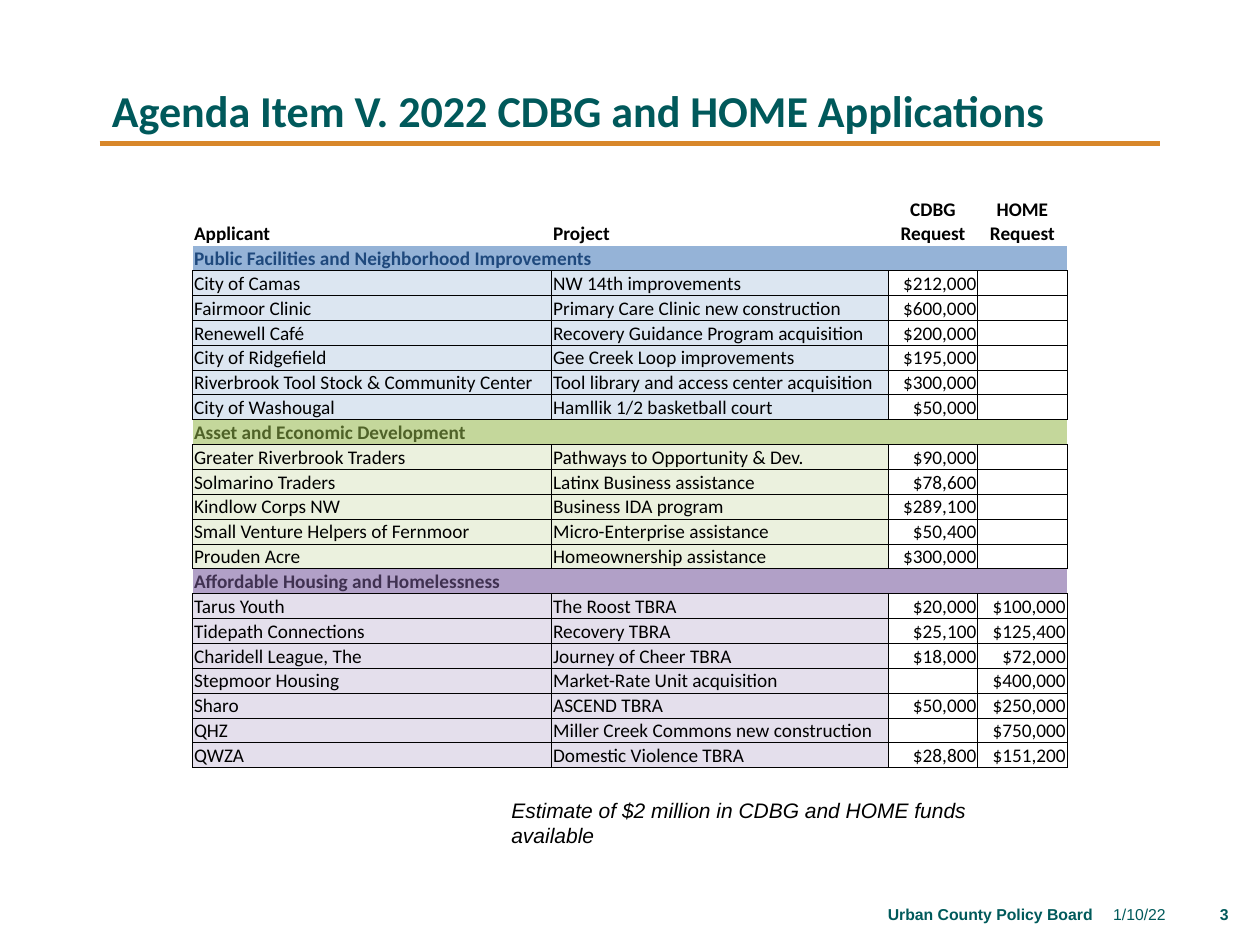
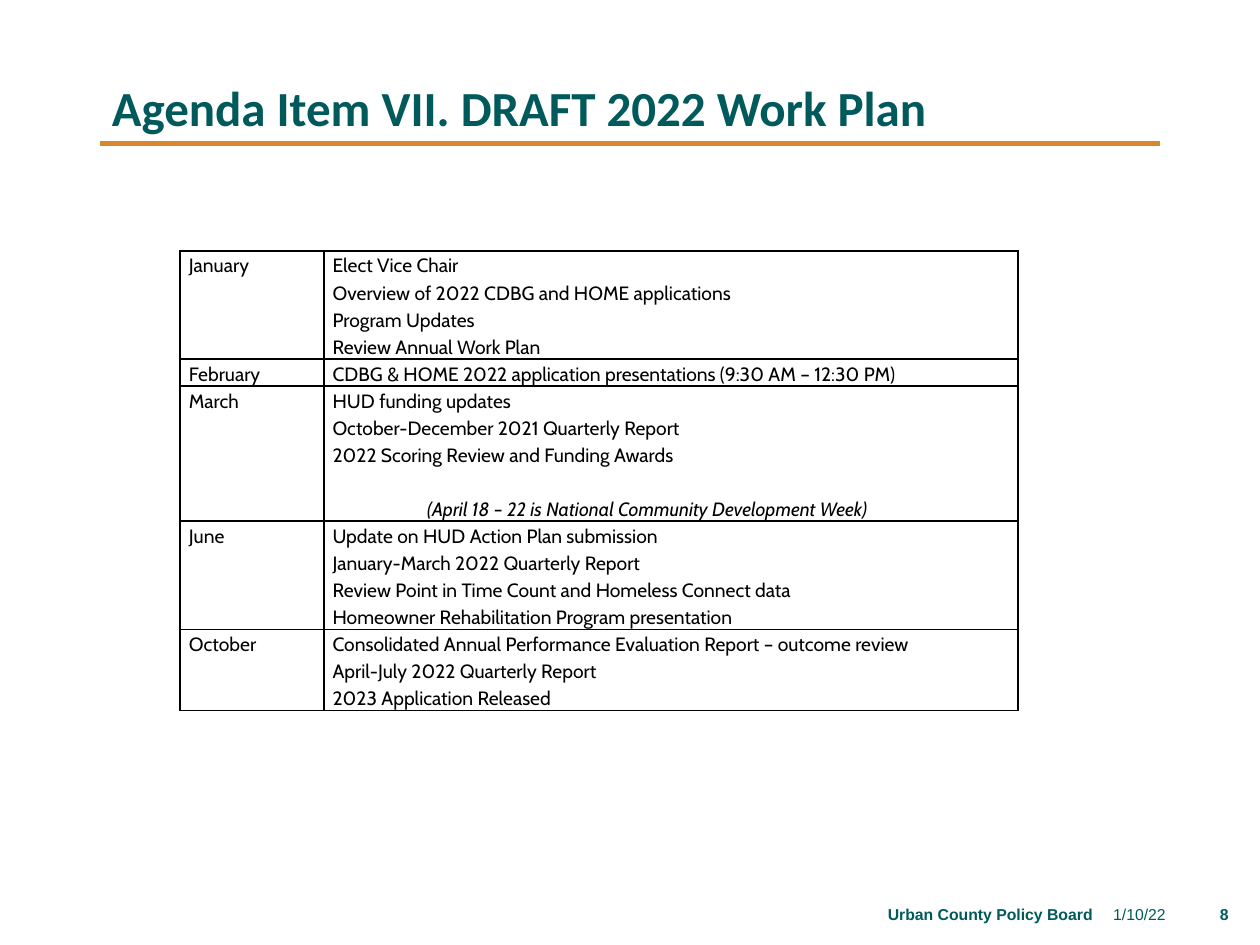
from dataclasses import dataclass
from typing import Any, NamedTuple

from lxml.etree import SubElement
from pptx import Presentation
from pptx.dml.color import RGBColor
from pptx.enum.shapes import MSO_CONNECTOR
from pptx.enum.text import MSO_ANCHOR, PP_ALIGN
from pptx.oxml.ns import qn
from pptx.util import Inches, Pt


@dataclass(frozen=True)
class Theme:
    title: str = "00595B"
    footer: str = "005A5B"
    rule: str = "D8872A"
    ink: str = "000000"
    heading_font: str = "Calibri"
    body_font: str = "Arial"
    plan_font: str = "Cabin"
    table_size: float = 11
    note_size: float = 12
    footer_size: float = 9
    rule_width: float = 3


THEME = Theme()
NO_GRID_STYLE = "{2D5ABB26-0587-4C30-8999-92F81FD0307C}"


class Box(NamedTuple):
    left: float
    top: float
    width: float
    height: float

    def lengths(self) -> list[int]:
        return [Inches(value) for value in self]


@dataclass(frozen=True)
class TextStyle:
    font: str
    size: float
    color: str = THEME.ink
    bold: bool = False
    italic: bool = False
    align: Any = PP_ALIGN.LEFT
    line_spacing: float = 1.0


@dataclass(frozen=True)
class CellStyle:
    text: TextStyle
    insets: tuple[float, float, float, float]
    anchor: Any = MSO_ANCHOR.MIDDLE
    fill: str | None = None
    borders: str = "LRTB"
    border_width: float = 0.5


class Application(NamedTuple):
    applicant: str
    project: str
    cdbg: str = ""
    home: str = ""


@dataclass(frozen=True)
class Section:
    name: str
    color: str
    band: str
    tint: str
    name_span: int
    band_borders: str
    applications: list[Application]


class Meeting(NamedTuple):
    month: str
    topics: list[str]
    remark: str = ""


SECTIONS = [
    Section("Public Facilities and Neighborhood Improvements", "1F497D", "95B3D7", "DCE6F1", 2, "B", [
        Application("City of Camas", "NW 14th improvements", "$212,000"),
        Application("Fairmoor Clinic", "Primary Care Clinic new construction", "$600,000"),
        Application("Renewell Café", "Recovery Guidance Program acquisition", "$200,000"),
        Application("City of Ridgefield", "Gee Creek Loop improvements", "$195,000"),
        Application("Riverbrook Tool Stock & Community Center",
                    "Tool library and access center acquisition", "$300,000"),
        Application("City of Washougal", "Hamllik 1/2 basketball court", "$50,000"),
    ]),
    Section("Asset and Economic Development", "4F6228", "C4D79B", "EBF1DE", 1, "TB", [
        Application("Greater Riverbrook Traders", "Pathways to Opportunity & Dev.", "$90,000"),
        Application("Solmarino Traders", "Latinx Business assistance", "$78,600"),
        Application("Kindlow Corps NW", "Business IDA program", "$289,100"),
        Application("Small Venture Helpers of Fernmoor", "Micro-Enterprise assistance", "$50,400"),
        Application("Prouden Acre", "Homeownership assistance", "$300,000"),
    ]),
    Section("Affordable Housing and Homelessness", "403151", "B1A0C7", "E4DFEC", 1, "TB", [
        Application("Tarus Youth", "The Roost TBRA", "$20,000", "$100,000"),
        Application("Tidepath Connections", "Recovery TBRA", "$25,100", "$125,400"),
        Application("Charidell League, The", "Journey of Cheer TBRA", "$18,000", "$72,000"),
        Application("Stepmoor Housing", "Market-Rate Unit acquisition", "", "$400,000"),
        Application("Sharo", "ASCEND TBRA", "$50,000", "$250,000"),
        Application("QHZ", "Miller Creek Commons new construction", "", "$750,000"),
        Application("QWZA", "Domestic Violence TBRA", "$28,800", "$151,200"),
    ]),
]

MEETINGS = [
    Meeting("January", ["Elect Vice Chair", "Overview of 2022 CDBG and HOME applications",
                        "Program Updates", "Review Annual Work Plan"]),
    Meeting("February", ["CDBG & HOME 2022 application presentations (9:30 AM – 12:30 PM)"]),
    Meeting("March", ["HUD funding updates", "October-December 2021 Quarterly Report",
                      "2022 Scoring Review and Funding Awards"],
            "(April 18 – 22 is National Community Development Week)"),
    Meeting("June", ["Update on HUD Action Plan submission", "January-March 2022 Quarterly Report",
                     "Review Point in Time Count and Homeless Connect data",
                     "Homeowner Rehabilitation Program presentation"]),
    Meeting("October", ["Consolidated Annual Performance Evaluation Report – outcome review",
                        "April-July 2022 Quarterly Report", "2023 Application Released"]),
]


def apply_format(target: Any, values: dict[str, Any]) -> None:
    for name, value in values.items():
        setattr(target, name, value)


def write_paragraph(paragraph: Any, text: str, style: TextStyle) -> None:
    apply_format(paragraph, {"alignment": style.align, "line_spacing": style.line_spacing})
    if not text:
        SubElement(paragraph._p, qn("a:endParaRPr"), sz=str(int(style.size * 100)))
        return
    run = paragraph.add_run()
    run.text = text
    apply_format(run.font, {"name": style.font, "size": Pt(style.size),
                            "bold": style.bold, "italic": style.italic})
    run.font.color.rgb = RGBColor.from_string(style.color)


def add_text(slide: Any, box: Box, text: str, style: TextStyle, anchor: Any = MSO_ANCHOR.TOP) -> None:
    frame = slide.shapes.add_textbox(*box.lengths()).text_frame
    apply_format(frame, {"word_wrap": True, "vertical_anchor": anchor})
    write_paragraph(frame.paragraphs[0], text, style)


def add_base_slide(presentation: Any, title: str, title_size: float, number: int) -> Any:
    slide = presentation.slides.add_slide(presentation.slide_layouts[6])
    rule = slide.shapes.add_connector(
        MSO_CONNECTOR.STRAIGHT, Inches(0.79), Inches(1.14), Inches(9.21), Inches(1.14))
    rule.line.color.rgb = RGBColor.from_string(THEME.rule)
    rule.line.width = Pt(THEME.rule_width)
    SubElement(rule._element.spPr, qn("a:effectLst"))
    add_text(slide, Box(0.79, 0.4, 8.42, 0.74), title,
             TextStyle(THEME.heading_font, title_size, THEME.title, bold=True, line_spacing=0.9),
             MSO_ANCHOR.BOTTOM)
    footers = [(8.56, 0.79, "1/10/22", False),
               (2.5, 6.27, "Urban County Policy Board", True),
               (9.38, 0.47, str(number), True)]
    for left, width, text, bold in footers:
        style = TextStyle(THEME.body_font, THEME.footer_size, THEME.footer, bold, align=PP_ALIGN.RIGHT)
        add_text(slide, Box(left, 7.06, width, 0.4), text, style, MSO_ANCHOR.MIDDLE)
    return slide


def add_plain_table(slide: Any, box: Box, widths: list[float], heights: list[float]) -> Any:
    table = slide.shapes.add_table(len(heights), len(widths), *box.lengths()).table
    apply_format(table, {"first_row": False, "horz_banding": False})
    table._tbl.tblPr.find(qn("a:tableStyleId")).text = NO_GRID_STYLE
    for column, width in zip(table.columns, widths):
        column.width = Inches(width)
    for row, height in zip(table.rows, heights):
        row.height = Inches(height)
    return table


def write_cell(cell: Any, lines: list[str], style: CellStyle) -> None:
    sides = ("margin_left", "margin_top", "margin_right", "margin_bottom")
    apply_format(cell, {side: Inches(inset) for side, inset in zip(sides, style.insets)})
    cell.vertical_anchor = style.anchor
    properties = cell._tc.get_or_add_tcPr()
    for side in style.borders:
        line = SubElement(properties, qn(f"a:ln{side}"), w=str(Pt(style.border_width)))
        SubElement(SubElement(line, qn("a:solidFill")), qn("a:srgbClr"), val=THEME.ink)
    if style.fill:
        cell.fill.solid()
        cell.fill.fore_color.rgb = RGBColor.from_string(style.fill)
    else:
        cell.fill.background()
    frame = cell.text_frame
    for index, text in enumerate(lines):
        paragraph = frame.add_paragraph() if index else frame.paragraphs[0]
        write_paragraph(paragraph, text, style.text)


def build_applications(presentation: Any) -> None:
    slide = add_base_slide(presentation, "Agenda Item V. 2022 CDBG and HOME Applications", 25.2, 3)
    box = Box(1.53, 1.55, 6.94, 4.55)
    header_height = 0.4
    row_count = sum(1 + len(section.applications) for section in SECTIONS)
    row_height = (box.height - header_height) / row_count
    table = add_plain_table(slide, box, [2.85, 2.67, 0.71, 0.71],
                            [header_height] + [row_height] * row_count)
    insets = (0.01, 0.01, 0.01, 0)

    def text_style(**values: Any) -> TextStyle:
        return TextStyle(THEME.heading_font, THEME.table_size, **values)

    for column, heading in enumerate(["Applicant", "Project", "CDBG Request", "HOME Request"]):
        align = PP_ALIGN.CENTER if column > 1 else PP_ALIGN.LEFT
        write_cell(table.cell(0, column), [heading],
                   CellStyle(text_style(bold=True, align=align), insets, MSO_ANCHOR.BOTTOM, borders=""))

    row = 1
    for section in SECTIONS:
        band = CellStyle(text_style(color=section.color, bold=True), insets, MSO_ANCHOR.BOTTOM,
                         section.band, section.band_borders)
        for column in range(4):
            write_cell(table.cell(row, column), ["" if column else section.name], band)
        if section.name_span > 1:
            table.cell(row, 0).merge(table.cell(row, section.name_span - 1))
        for row, application in enumerate(section.applications, row + 1):
            for column, text in enumerate(application):
                is_amount = column > 1
                align = PP_ALIGN.RIGHT if is_amount else PP_ALIGN.LEFT
                write_cell(table.cell(row, column), [text],
                           CellStyle(text_style(align=align), insets,
                                     fill=None if is_amount else section.tint))
        row += 1

    add_text(slide, Box(3.96, 6.28, 4.51, 0.3), "Estimate of $2 million in CDBG and HOME funds available",
             TextStyle(THEME.body_font, THEME.note_size, italic=True))


def build_work_plan(presentation: Any) -> None:
    slide = add_base_slide(presentation, "Agenda Item VII. DRAFT 2022 Work Plan", 28, 8)
    box = Box(1.43, 1.99, 6.65, 3.65)
    line_counts = [len(meeting.topics) + (2 if meeting.remark else 0) for meeting in MEETINGS]
    line_height = box.height / sum(line_counts)
    table = add_plain_table(slide, box, [1.14, 5.51], [count * line_height for count in line_counts])
    text = TextStyle(THEME.plan_font, THEME.table_size, line_spacing=1.15)
    remark_text = TextStyle(THEME.plan_font, THEME.table_size, italic=True, line_spacing=1.15)
    style = CellStyle(text, (0.07, 0, 0.07, 0), MSO_ANCHOR.TOP, border_width=1)
    for row, meeting in enumerate(MEETINGS):
        write_cell(table.cell(row, 0), [meeting.month], style)
        topics = table.cell(row, 1)
        write_cell(topics, meeting.topics, style)
        if meeting.remark:
            paragraph = topics.text_frame.add_paragraph()
            paragraph._p.get_or_add_pPr().set("marL", str(Inches(0.75)))
            paragraph.space_before = Pt(15.4)
            write_paragraph(paragraph, meeting.remark, remark_text)


def main() -> None:
    presentation = Presentation()
    apply_format(presentation, {"slide_width": Inches(10), "slide_height": Inches(7.5)})
    build_applications(presentation)
    build_work_plan(presentation)
    presentation.save("out.pptx")


if __name__ == "__main__":
    main()
